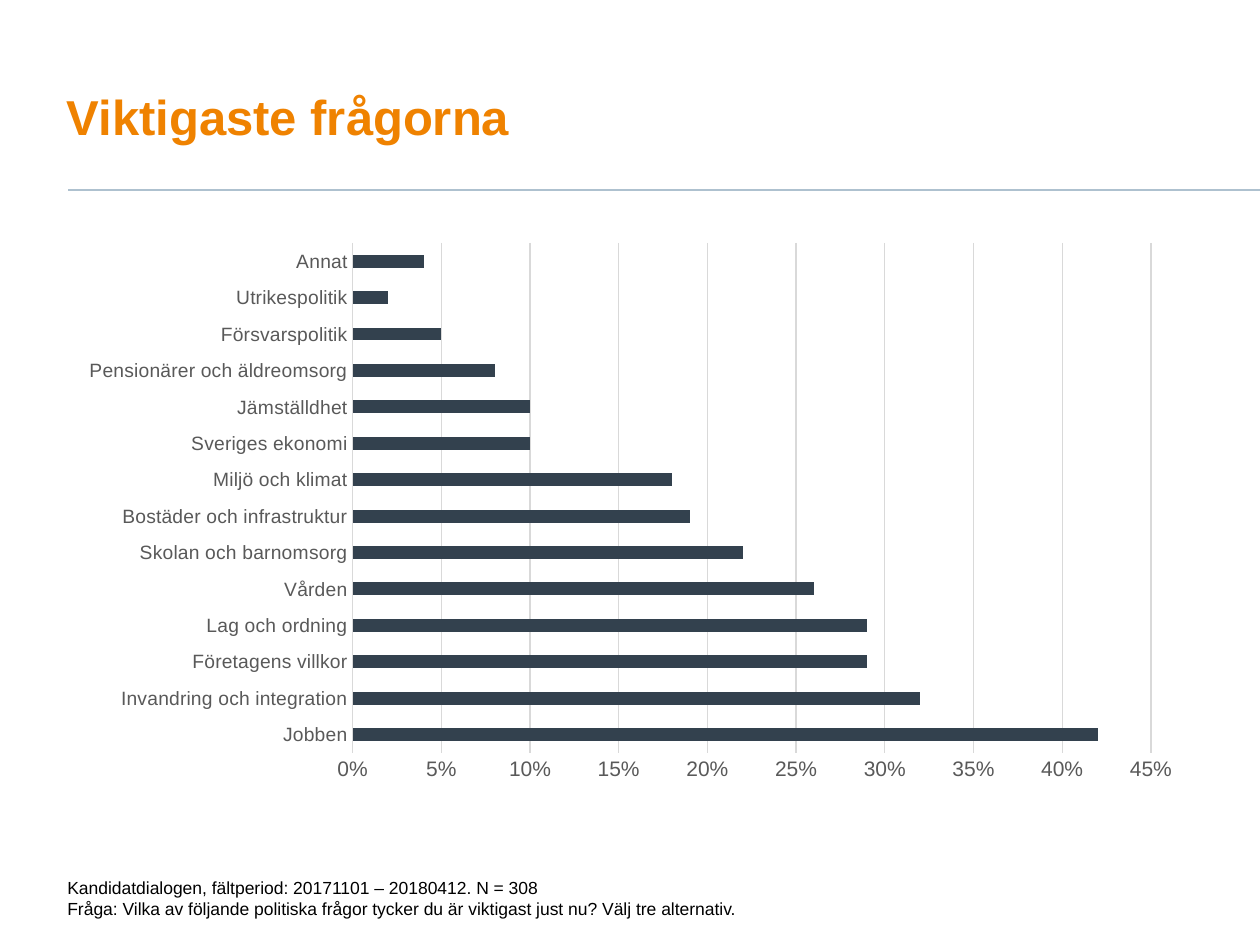
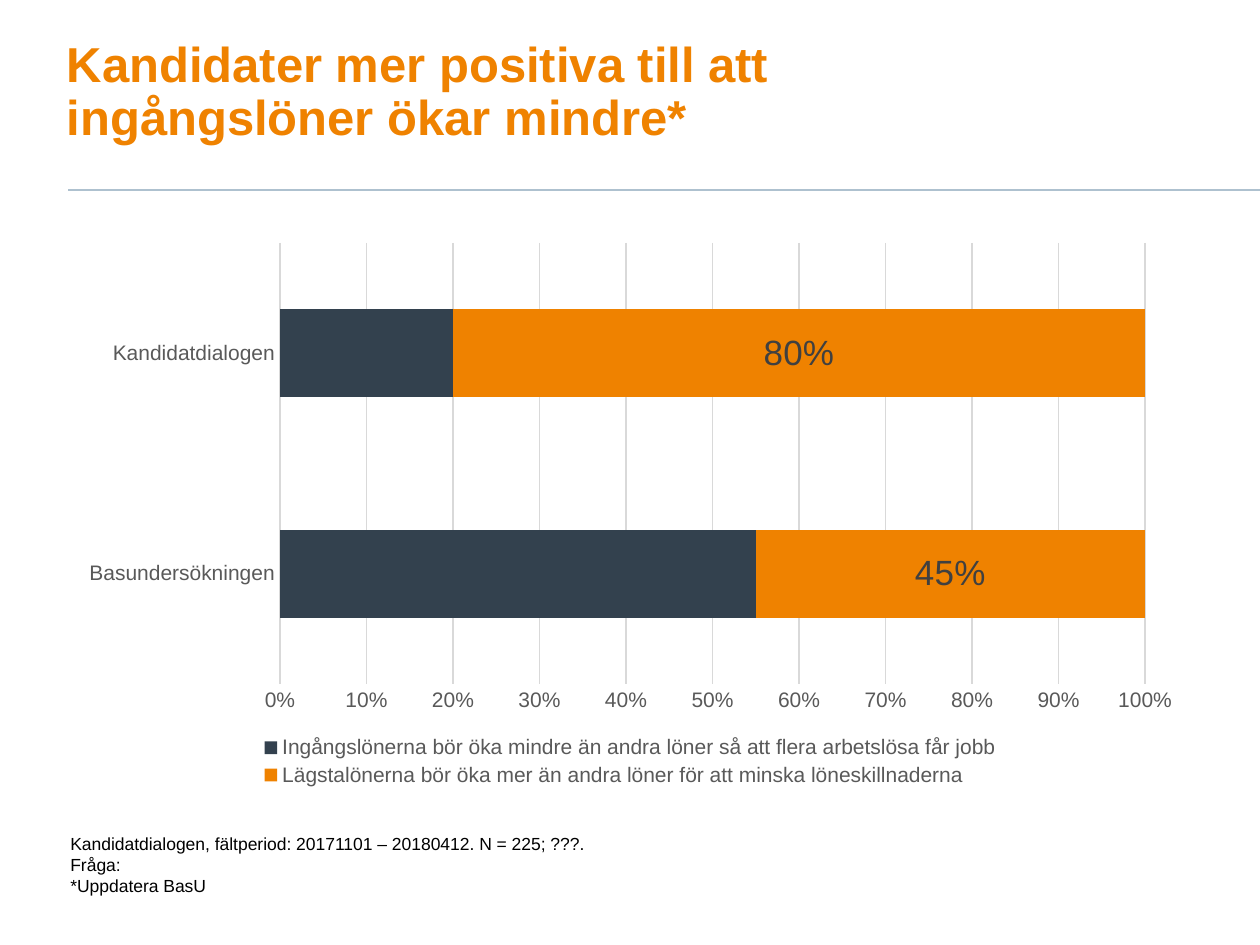
from dataclasses import dataclass
from typing import Any, Optional

from lxml import etree
from pptx import Presentation
from pptx.chart.axis import CategoryAxis, ValueAxis
from pptx.chart.chart import Chart
from pptx.chart.data import CategoryChartData
from pptx.dml.color import RGBColor
from pptx.enum.chart import (XL_CHART_TYPE, XL_LABEL_POSITION,
                             XL_LEGEND_POSITION, XL_TICK_MARK)
from pptx.enum.shapes import MSO_CONNECTOR
from pptx.enum.text import MSO_ANCHOR
from pptx.oxml.ns import qn
from pptx.slide import Slide
from pptx.util import Pt

CLUSTERED = XL_CHART_TYPE.BAR_CLUSTERED
STACKED_FULL = XL_CHART_TYPE.BAR_STACKED_100
NO_TICK = XL_TICK_MARK.NONE
LABEL_CENTER = XL_LABEL_POSITION.CENTER
LEGEND_BOTTOM = XL_LEGEND_POSITION.BOTTOM
STRAIGHT = MSO_CONNECTOR.STRAIGHT
ANCHOR_TOP, ANCHOR_BOTTOM = MSO_ANCHOR.TOP, MSO_ANCHOR.BOTTOM


@dataclass(frozen=True)
class Theme:
    font: str = "Arial"
    orange: str = "EF8200"
    navy: str = "33414E"
    rule: str = "AEC1CF"
    grid: str = "D9D9D9"
    axis_text: str = "595959"
    label_text: str = "404040"
    black: str = "000000"
    title_size: float = 28
    label_size: float = 20
    axis_size: float = 12
    note_size: float = 10
    grid_width: float = 0.75


@dataclass(frozen=True)
class Box:
    left: float
    top: float
    width: float
    height: float

    def lengths(self) -> tuple[Pt, Pt, Pt, Pt]:
        return Pt(self.left), Pt(self.top), Pt(self.width), Pt(self.height)


@dataclass(frozen=True)
class BarSeries:
    name: str
    values: tuple[float, ...]
    color: str
    labelled: bool = False


@dataclass(frozen=True)
class BarChart:
    kind: XL_CHART_TYPE
    categories: tuple[str, ...]
    series: tuple[BarSeries, ...]
    gap: int
    axis_maximum: float
    axis_step: float
    category_size: float
    overlap: int = 0
    legend: bool = False


@dataclass(frozen=True)
class ChartSlide:
    title: str
    chart: BarChart
    note_box: Box
    note: tuple[str, ...]


THEME = Theme()
SLIDE_WIDTH, SLIDE_HEIGHT = 720, 540
RULE_LEFT, RULE_TOP = 38.9, 108.7
TITLE_BOX = Box(38.2, 22.3, 515.5, 64.8)
CHART_BOX = Box(38.2, 132.5, 644.4, 319.7)
TITLE_FRAME = {"margin_left": 0, "margin_top": 0, "margin_right": Pt(7.2),
               "margin_bottom": Pt(3.6), "vertical_anchor": ANCHOR_BOTTOM}
NOTE_FRAME = {"margin_left": Pt(7.2), "margin_top": Pt(3.6),
              "margin_right": Pt(7.2), "margin_bottom": Pt(3.6),
              "vertical_anchor": ANCHOR_TOP}

# Content of the two slides
CHART_SLIDES = (
    ChartSlide(
        title="Viktigaste frågorna",
        chart=BarChart(
            kind=CLUSTERED,
            categories=("Jobben", "Invandring och integration",
                        "Företagens villkor", "Lag och ordning", "Vården",
                        "Skolan och barnomsorg", "Bostäder och infrastruktur",
                        "Miljö och klimat", "Sveriges ekonomi", "Jämställdhet",
                        "Pensionärer och äldreomsorg", "Försvarspolitik",
                        "Utrikespolitik", "Annat"),
            series=(BarSeries("Andel",
                              (0.42, 0.32, 0.29, 0.29, 0.26, 0.22, 0.19,
                               0.18, 0.1, 0.1, 0.08, 0.05, 0.02, 0.04),
                              THEME.navy),),
            gap=182, axis_maximum=0.45, axis_step=0.05, category_size=11),
        note_box=Box(31.4, 497.5, 574.6, 31.7),
        note=("Kandidatdialogen, fältperiod: 20171101 – 20180412. N = 308",
              "Fråga: Vilka av följande politiska frågor tycker du är "
              "viktigast just nu? Välj tre alternativ.")),
    ChartSlide(
        title="Kandidater mer positiva till att ingångslöner ökar mindre*",
        chart=BarChart(
            kind=STACKED_FULL,
            categories=("Basundersökningen", "Kandidatdialogen"),
            series=(BarSeries("Ingångslönerna bör öka mindre än andra löner "
                              "så att flera arbetslösa får jobb",
                              (0.55, 0.2), THEME.navy),
                    BarSeries("Lägstalönerna bör öka mer än andra löner "
                              "för att minska löneskillnaderna",
                              (0.45, 0.8), THEME.orange, labelled=True)),
            gap=150, axis_maximum=1, axis_step=0.1, category_size=12,
            overlap=100, legend=True),
        note_box=Box(33.1, 472.3, 574.6, 43.9),
        note=("Kandidatdialogen, fältperiod: 20171101 – 20180412. N = 225; ???.",
              "Fråga:", "*Uppdatera BasU")),
)


def set_attributes(target: Any, values: dict[str, Any]) -> None:
    for name, value in values.items():
        setattr(target, name, value)


def set_font(font: Any, size: float, color: str, bold: bool = False) -> None:
    set_attributes(font, {"name": THEME.font, "size": Pt(size), "bold": bold})
    font.color.rgb = RGBColor.from_string(color)


def set_line(line: Any, color: str, width: float) -> None:
    line.color.rgb = RGBColor.from_string(color)
    line.width = Pt(width)


# Shared text and rule
def add_text(slide: Slide, box: Box, lines: tuple[str, ...],
             frame_format: dict[str, Any], size: float, color: str,
             bold: bool = False, line_spacing: Optional[float] = None) -> None:
    frame = slide.shapes.add_textbox(*box.lengths()).text_frame
    set_attributes(frame, {"word_wrap": True, **frame_format})
    for index, line in enumerate(lines):
        paragraph = frame.add_paragraph() if index else frame.paragraphs[0]
        paragraph.line_spacing = line_spacing
        run = paragraph.add_run()
        run.text = line
        set_font(run.font, size, color, bold)


def add_rule(slide: Slide) -> None:
    rule = slide.shapes.add_connector(STRAIGHT, Pt(RULE_LEFT), Pt(RULE_TOP),
                                      Pt(SLIDE_WIDTH), Pt(RULE_TOP))
    set_line(rule.line, THEME.rule, 1)
    etree.SubElement(rule._element.spPr, qn("a:effectLst"))


# Charts
def format_category_axis(axis: CategoryAxis, size: float) -> None:
    set_attributes(axis, {"major_tick_mark": NO_TICK, "minor_tick_mark": NO_TICK,
                          "has_major_gridlines": False})
    set_font(axis.tick_labels.font, size, THEME.axis_text)
    set_line(axis.format.line, THEME.grid, THEME.grid_width)


def format_value_axis(axis: ValueAxis, maximum: float, step: float) -> None:
    set_attributes(axis, {"major_tick_mark": NO_TICK, "minor_tick_mark": NO_TICK,
                          "has_major_gridlines": True, "minimum_scale": 0,
                          "maximum_scale": maximum, "major_unit": step})
    set_attributes(axis.tick_labels, {"number_format": "0%",
                                      "number_format_is_linked": False})
    set_font(axis.tick_labels.font, THEME.axis_size, THEME.axis_text)
    axis.format.line.fill.background()
    set_line(axis.major_gridlines.format.line, THEME.grid, THEME.grid_width)


def format_series(chart: Chart, content: BarChart) -> None:
    plot = chart.plots[0]
    set_attributes(plot, {"gap_width": content.gap, "overlap": content.overlap,
                          "vary_by_categories": False})
    for series, bar in zip(plot.series, content.series):
        series.format.fill.solid()
        series.format.fill.fore_color.rgb = RGBColor.from_string(bar.color)
        if bar.labelled:
            labels = series.data_labels
            set_attributes(labels, {"show_value": True, "number_format": "0%",
                                    "number_format_is_linked": False,
                                    "position": LABEL_CENTER})
            set_font(labels.font, THEME.label_size, THEME.label_text)


def add_bar_chart(slide: Slide, content: BarChart) -> None:
    data = CategoryChartData(number_format="0%")
    data.categories = content.categories
    for bar in content.series:
        data.add_series(bar.name, bar.values)
    chart = slide.shapes.add_chart(content.kind, *CHART_BOX.lengths(), data).chart
    set_attributes(chart, {"has_title": False, "has_legend": content.legend})
    set_font(chart.font, THEME.note_size, THEME.black)
    format_category_axis(chart.category_axis, content.category_size)
    format_value_axis(chart.value_axis, content.axis_maximum, content.axis_step)
    format_series(chart, content)
    if content.legend:
        set_attributes(chart.legend, {"position": LEGEND_BOTTOM,
                                      "include_in_layout": False})
        set_font(chart.legend.font, THEME.axis_size, THEME.axis_text)


def add_chart_slide(presentation: Any, content: ChartSlide) -> None:
    slide = presentation.slides.add_slide(presentation.slide_layouts[6])
    add_rule(slide)
    add_text(slide, TITLE_BOX, (content.title,), TITLE_FRAME, THEME.title_size,
             THEME.orange, bold=True, line_spacing=0.9)
    add_bar_chart(slide, content.chart)
    add_text(slide, content.note_box, content.note, NOTE_FRAME,
             THEME.note_size, THEME.black)


def main() -> None:
    presentation = Presentation()
    set_attributes(presentation, {"slide_width": Pt(SLIDE_WIDTH),
                                  "slide_height": Pt(SLIDE_HEIGHT)})
    for content in CHART_SLIDES:
        add_chart_slide(presentation, content)
    presentation.save("out.pptx")


if __name__ == "__main__":
    main()
